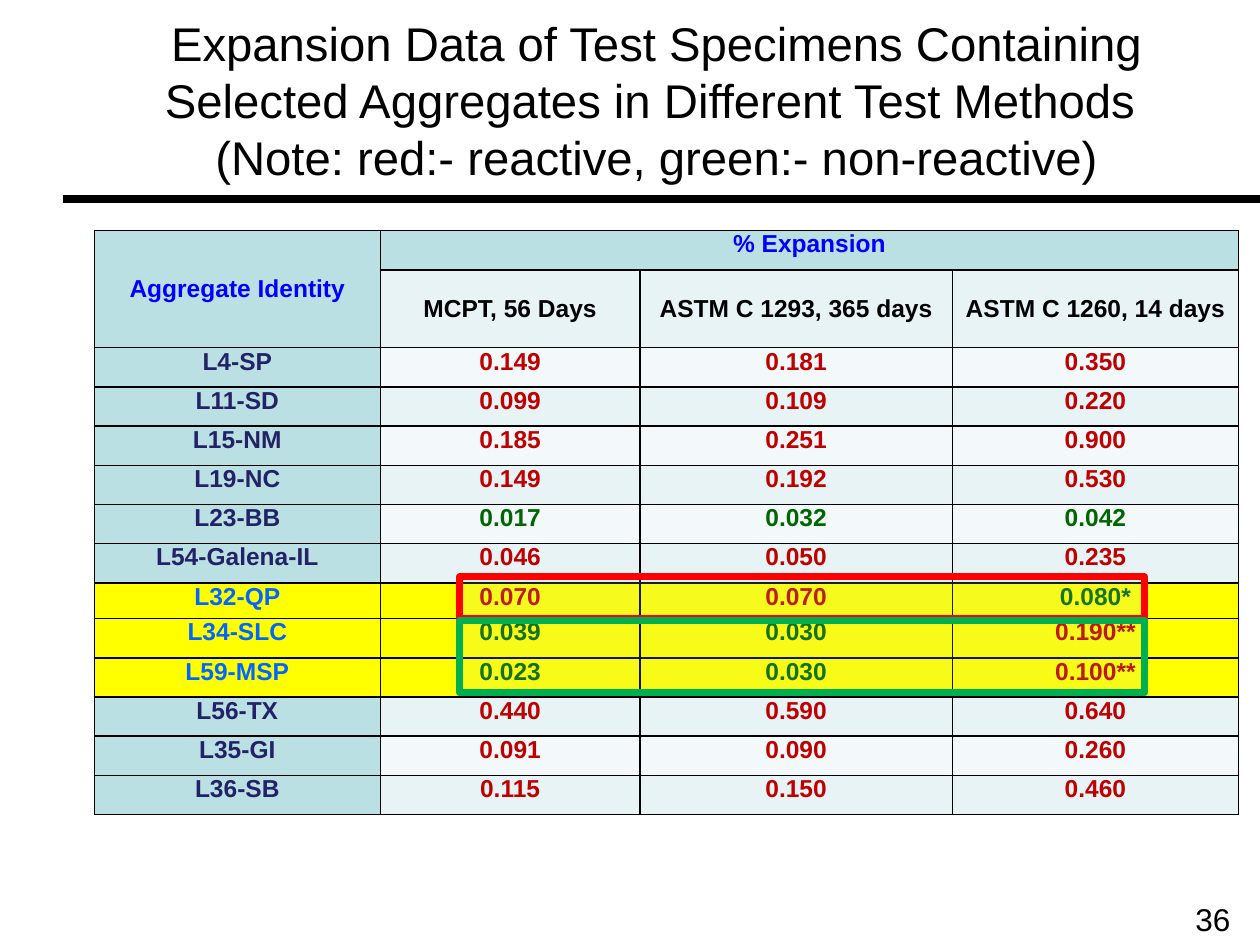
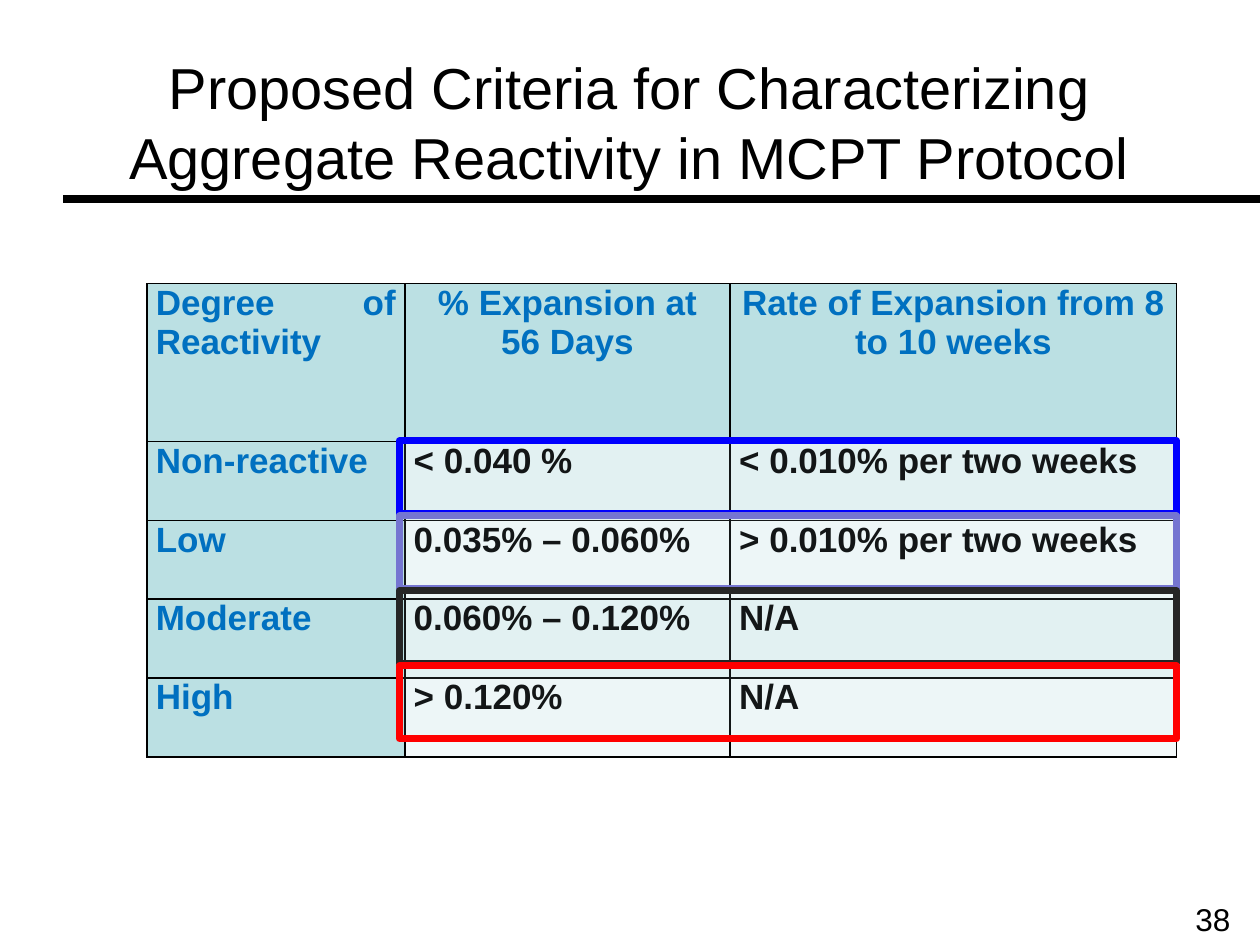
from lxml import etree
from pptx import Presentation
from pptx import util as u
from pptx.dml import color
from pptx.enum import shapes, text
from pptx.oxml import ns

FONT = "Arial"
BLACK, TEAL, BAND, PALE = "000000", "BBE0E3", "E7F3F4", "F3F9FA"
BLUE, NAVY, SKY, AZURE = "0000FF", "222267", "0066FF", "0070C0"
RED, GREEN, YELLOW = "C00000", "006600", "FFFF00"
LEFT, MID, JUST = text.PP_ALIGN.LEFT, text.PP_ALIGN.CENTER, text.PP_ALIGN.JUSTIFY
MIDDLE, TOP = text.MSO_ANCHOR.MIDDLE, text.MSO_ANCHOR.TOP

LIMITS = (0.04, 0.04, 0.10)
MARKED = ("L32-QP", "L34-SLC", "L59-MSP")
TESTS = ("MCPT, 56 Days", "ASTM C 1293, 365 days", "ASTM C 1260, 14 days")
RESULTS = (
    ("L4-SP", "0.149", "0.181", "0.350"),
    ("L11-SD", "0.099", "0.109", "0.220"),
    ("L15-NM", "0.185", "0.251", "0.900"),
    ("L19-NC", "0.149", "0.192", "0.530"),
    ("L23-BB", "0.017", "0.032", "0.042"),
    ("L54-Galena-IL", "0.046", "0.050", "0.235"),
    ("L32-QP", "0.070", "0.070", "0.080*"),
    ("L34-SLC", "0.039", "0.030", "0.190**"),
    ("L59-MSP", "0.023", "0.030", "0.100**"),
    ("L56-TX", "0.440", "0.590", "0.640"),
    ("L35-GI", "0.091", "0.090", "0.260"),
    ("L36-SB", "0.115", "0.150", "0.460"),
)
CRITERIA = (
    ("Degree of Reactivity", "% Expansion at 56 Days",
     "Rate of Expansion from 8 to 10 weeks"),
    ("Non-reactive", "< 0.040 %", "< 0.010% per two weeks"),
    ("Low", "0.035% – 0.060%", "> 0.010% per two weeks"),
    ("Moderate", "0.060% – 0.120%", "N/A"),
    ("High", "> 0.120%", "N/A"),
)


def rgb(code):
    return color.RGBColor.from_string(code)


def cms(*sizes):
    return [u.Cm(size) for size in sizes]


def node(parent, tag, **attrs):
    return etree.SubElement(parent, ns.qn(tag), **attrs)


def write(frame, words, size, tint=BLACK, bold=False, align=LEFT):
    para = frame.paragraphs[0]
    para.alignment = align
    for i, part in enumerate(words.split("\n")):
        if i:
            para.add_line_break()
        run = para.add_run()
        run.text = part
        run.font.name, run.font.size = FONT, u.Pt(size)
        run.font.bold = bold
        run.font.color.rgb = rgb(tint)


def add_rule(slide):
    ends = cms(1.27, 4.02, 25.4, 4.02)
    rule = slide.shapes.add_connector(shapes.MSO_CONNECTOR.STRAIGHT, *ends)
    rule.line.color.rgb = rgb(BLACK)
    rule.line.width = u.Pt(4.5)
    node(rule._element.spPr, "a:effectLst")


def add_page(slide, number):
    box = slide.shapes.add_textbox(*cms(23.85, 18.01, 1.47, 1.02))
    box.text_frame.word_wrap = True
    write(box.text_frame, number, 18)


def add_slide(deck, words, place, size, number):
    slide = deck.slides.add_slide(deck.slide_layouts[5])
    add_rule(slide)
    add_page(slide, number)
    title = slide.shapes.title
    title.left, title.top, title.width, title.height = cms(*place)
    frame = title.text_frame
    frame.auto_size = text.MSO_AUTO_SIZE.NONE
    frame.vertical_anchor = MIDDLE
    write(frame, words, size, align=MID)
    return slide


def add_grid(slide, left, top, cols, rows):
    place = cms(left, top, sum(cols), sum(rows))
    grid = slide.shapes.add_table(len(rows), len(cols), *place).table
    for col, width in zip(grid.columns, cols):
        col.width = u.Cm(width)
    for row, height in zip(grid.rows, rows):
        row.height = u.Cm(height)
    for r in range(len(rows)):
        for c in range(len(cols)):
            head = r == 0 or c == 0
            paint(grid.cell(r, c), TEAL if head else BAND if r % 2 else PALE)
    return grid


def paint(cell, tint):
    cell.fill.solid()
    cell.fill.fore_color.rgb = rgb(tint)
    cell.margin_left = cell.margin_right = u.Cm(0.18)
    cell.margin_top = cell.margin_bottom = 0
    props = cell._tc.get_or_add_tcPr()
    for i, side in enumerate("LRTB"):
        line = etree.Element(ns.qn("a:ln" + side), w=str(u.Pt(1)))
        node(node(line, "a:solidFill"), "a:srgbClr", val=BLACK)
        props.insert(i, line)


def put(cell, words, size, tint, align=MID, anchor=TOP):
    cell.vertical_anchor = anchor
    write(cell.text_frame, words, size, tint, True, align)


def add_frame(slide, place, tint, alpha):
    box = slide.shapes.add_shape(shapes.MSO_SHAPE.RECTANGLE, *cms(*place))
    box.shadow.inherit = False
    box.fill.solid()
    box.fill.fore_color.rgb = rgb(TEAL)
    shade = box._element.spPr.find(".//" + ns.qn("a:srgbClr"))
    node(shade, "a:alpha", val=str(alpha * 1000))
    box.line.color.rgb = rgb(tint)
    box.line.width = u.Pt(4)
    node(box.line._get_or_add_ln(), "a:round")


def fill_data(grid):
    grid.cell(0, 0).merge(grid.cell(1, 0))
    grid.cell(0, 1).merge(grid.cell(0, 3))
    put(grid.cell(0, 0), "Aggregate Identity", 14, BLUE, anchor=MIDDLE)
    put(grid.cell(0, 1), "% Expansion", 14, BLUE)
    for c, test in enumerate(TESTS, 1):
        put(grid.cell(1, c), test, 14, BLACK, anchor=MIDDLE)
    for r, (name, *values) in enumerate(RESULTS, 2):
        marked = name in MARKED
        put(grid.cell(r, 0), name, 14, SKY if marked else NAVY)
        for c, (value, limit) in enumerate(zip(values, LIMITS), 1):
            over = float(value.rstrip("*")) >= limit
            put(grid.cell(r, c), value, 14, RED if over else GREEN)
        if marked:
            for c in range(4):
                grid.cell(r, c).fill.fore_color.rgb = rgb(YELLOW)


def add_data(deck):
    words = ("Expansion Data of Test Specimens Containing Selected Aggregates "
             "in Different Test Methods \n"
             "(Note: red:- reactive, green:- non-reactive)")
    slide = add_slide(deck, words, (1.27, 0.2, 23.93, 3.61), 27, "36")
    rows = [0.79, 1.57] + [0.79] * 6 + [0.72] + [0.79] * 5
    fill_data(add_grid(slide, 1.9, 4.65, (5.77, 5.23, 6.3, 5.77), rows))
    add_frame(slide, (9.27, 11.63, 13.8, 0.84), "FF0000", 13)
    add_frame(slide, (9.27, 12.5, 13.8, 1.47), "00B050", 10)


def add_limits(deck):
    words = ("Proposed Criteria for Characterizing Aggregate Reactivity "
             "in MCPT Protocol")
    slide = add_slide(deck, words, (1.47, 0.64, 22.43, 3.61), 33, "38")
    grid = add_grid(slide, 2.96, 5.72, (5.2, 6.56, 9), [3.18] + [1.59] * 4)
    for r, row in enumerate(CRITERIA):
        for c, words in enumerate(row):
            tint = BLACK if r and c else AZURE
            align = MID if r == 0 and c else JUST
            put(grid.cell(r, c), words, 20, tint, align)
    for i, tint in enumerate((BLUE, "7575D1", "262626", "FF0000")):
        add_frame(slide, (8.05, 8.89 + 1.51 * i, 15.67, 1.47), tint, 10)


def main():
    deck = Presentation()
    deck.slide_width, deck.slide_height = cms(25.4, 19.05)
    add_data(deck)
    add_limits(deck)
    deck.save("out.pptx")


if __name__ == "__main__":
    main()
